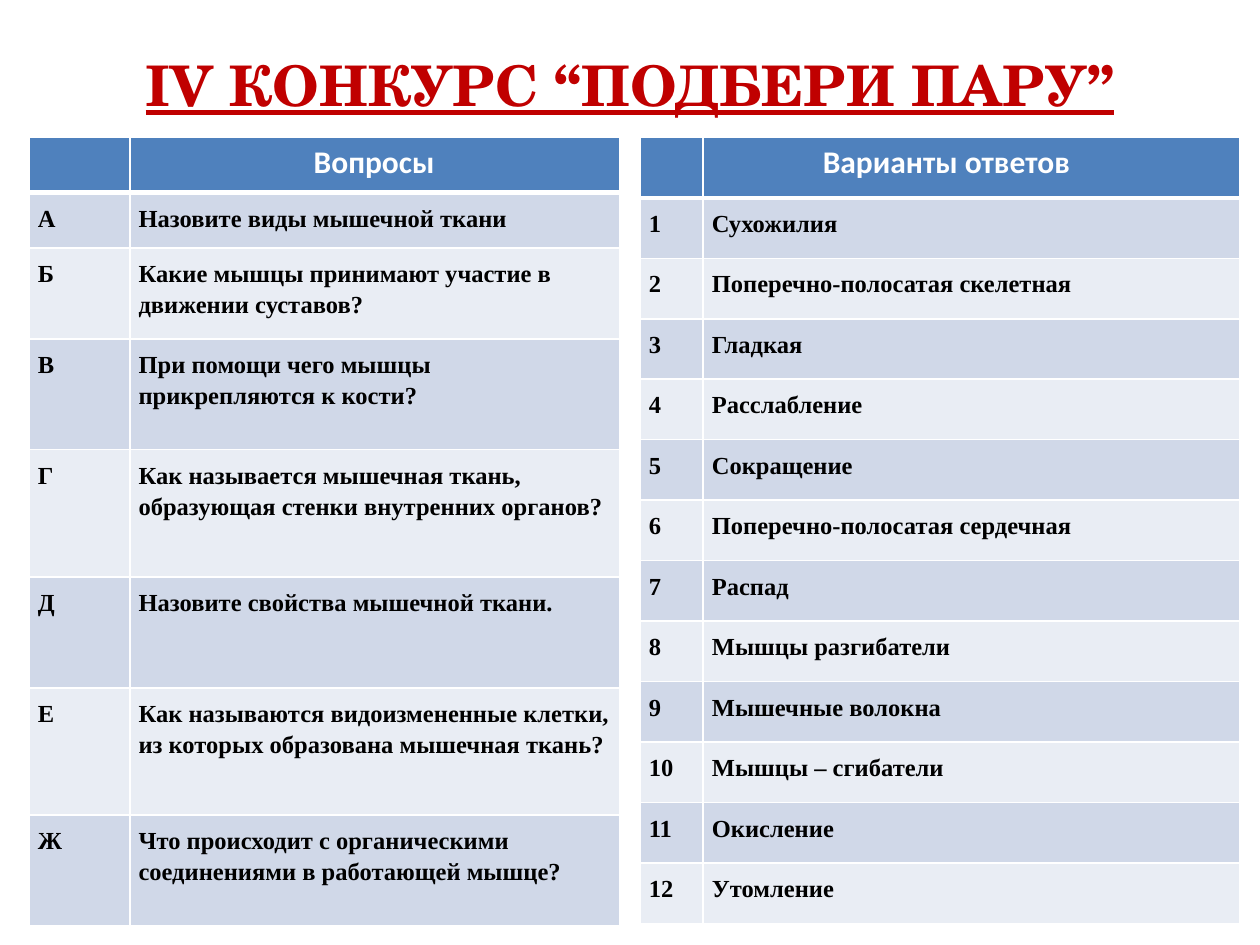
from lxml.etree import SubElement
from pptx import Presentation
from pptx.dml.color import RGBColor
from pptx.enum.text import MSO_ANCHOR, PP_ALIGN
from pptx.oxml.ns import qn
from pptx.util import Inches, Pt

COLORS = {
    "title": "C00000",
    "header": "4F81BD",
    "odd": "D0D8E8",
    "even": "E9EDF4",
    "text": "000000",
    "white": "FFFFFF",
}

QUESTIONS = [
    ("А", "Назовите виды мышечной ткани"),
    ("Б", "Какие мышцы принимают участие в движении суставов?"),
    ("В", "При помощи чего мышцы прикрепляются к кости?"),
    ("Г", "Как называется мышечная ткань, образующая стенки внутренних органов?"),
    ("Д", "Назовите свойства мышечной ткани."),
    ("Е", "Как называются видоизмененные клетки, из которых образована мышечная ткань?"),
    ("Ж", "Что происходит с органическими соединениями в работающей мышце?"),
]
QUESTION_HEIGHTS = [0.44, 0.44, 0.72, 0.88, 1.01, 0.88, 1.01, 0.88]

ANSWERS = [
    "Сухожилия", "Поперечно-полосатая скелетная", "Гладкая", "Расслабление",
    "Сокращение", "Поперечно-полосатая сердечная", "Распад",
    "Мышцы разгибатели", "Мышечные волокна", "Мышцы – сгибатели",
    "Окисление", "Утомление",
]


def rgb(name):
    return RGBColor.from_string(COLORS[name])


def style_font(font, name, size, color):
    font.name = name
    font.size = Pt(size)
    font.bold = True
    font.color.rgb = rgb(color)


def add_title(s, text):
    tf = s.shapes.add_textbox(Inches(0.5), Inches(0.3), Inches(9), Inches(1.25)).text_frame
    tf.word_wrap = True
    tf.vertical_anchor = MSO_ANCHOR.TOP
    tf.margin_top = Inches(0.1)
    p = tf.paragraphs[0]
    p.text = text
    p.alignment = PP_ALIGN.CENTER
    font = p.runs[0].font
    style_font(font, "TeX Gyre Schola", 32, "title")
    font.underline = True


def set_borders(cell, row):
    """Draw white cell borders, with a thicker rule under the header row."""
    tc_pr = cell._tc.get_or_add_tcPr()
    for edge in "LRTB":
        thick = (row, edge) in ((0, "B"), (1, "T"))
        ln = SubElement(tc_pr, qn(f"a:ln{edge}"), w=str(Pt(3 if thick else 1)))
        fill = SubElement(ln, qn("a:solidFill"))
        SubElement(fill, qn("a:srgbClr"), val=COLORS["white"])


def fill_cell(cell, row, text):
    set_borders(cell, row)
    cell.fill.solid()
    cell.fill.fore_color.rgb = rgb("header" if row == 0 else "odd" if row % 2 else "even")
    p = cell.text_frame.paragraphs[0]
    p.text = text
    if row == 0:
        style_font(p.font, "Calibri", 18, "white")
    else:
        cell.margin_left = cell.margin_right = Inches(0.07)
        cell.margin_top = cell.margin_bottom = Inches(0.07)
        p.line_spacing = 1.15
    for r in p.runs:
        if row == 0:
            style_font(r.font, "Calibri", 18, "white")
        else:
            style_font(r.font, "Times New Roman", 14, "text")


def add_pair_table(s, left, widths, heights, header, indent, pairs):
    """Add a two-column table whose header text starts at the given indent."""
    rows = [("", header), *pairs]
    table = s.shapes.add_table(
        len(rows), 2, Inches(left), Inches(1.09),
        Inches(sum(widths)), Inches(sum(heights))).table
    for column, width in zip(table.columns, widths):
        column.width = Inches(width)
    for i, (height, texts) in enumerate(zip(heights, rows)):
        table.rows[i].height = Inches(height)
        for j, text in enumerate(texts):
            fill_cell(table.cell(i, j), i, text)
    table.cell(0, 1).margin_left = Inches(indent)


def main():
    prs = Presentation()
    prs.slide_width, prs.slide_height = Inches(10), Inches(7.5)
    s = prs.slides.add_slide(prs.slide_layouts[6])
    add_title(s, "IV КОНКУРС “ПОДБЕРИ ПАРУ”")
    add_pair_table(s, 0.23, [0.8, 3.89], QUESTION_HEIGHTS, "Вопросы", 1.46, QUESTIONS)
    answers = [(str(n), text) for n, text in enumerate(ANSWERS, 1)]
    add_pair_table(s, 5.08, [0.5, 4.26], [0.48] * 13, "Варианты ответов", 0.95, answers)
    prs.save("out.pptx")


if __name__ == "__main__":
    main()
